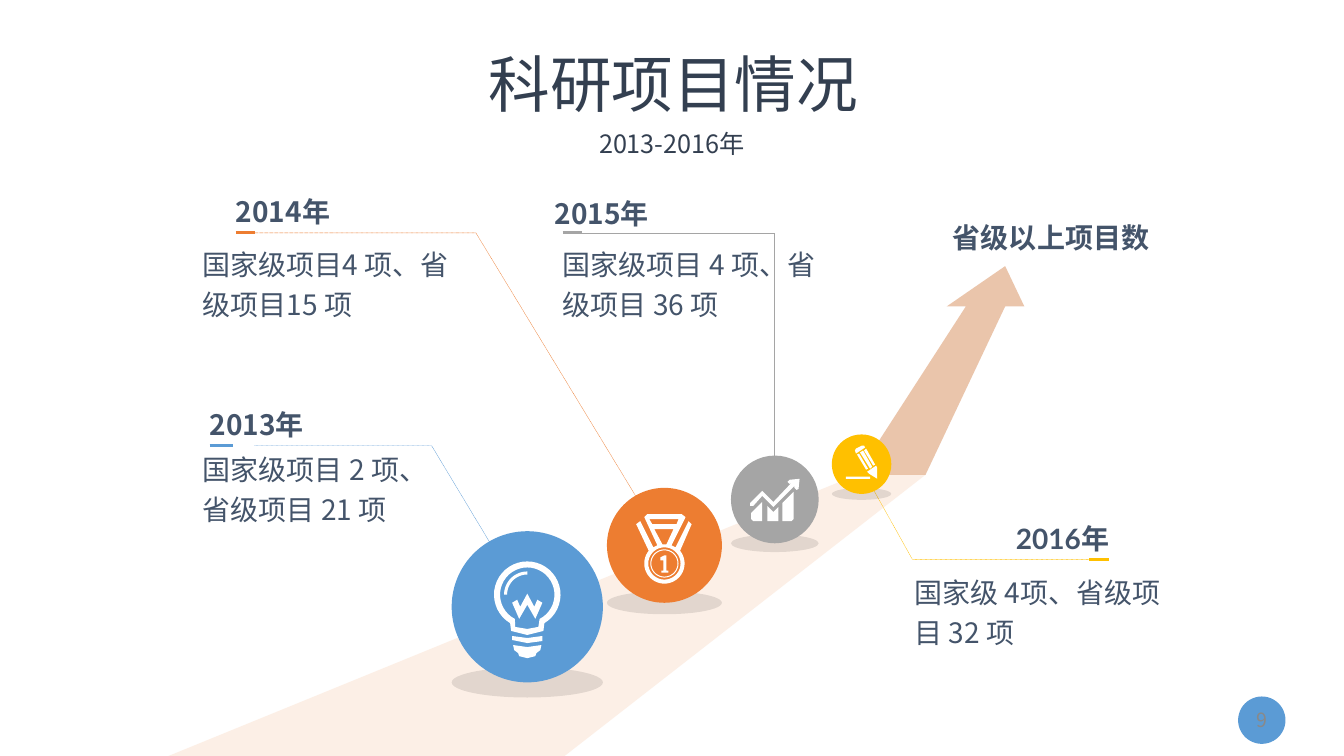
from dataclasses import dataclass
from math import cos, radians, sin

from lxml import etree
from pptx import Presentation
from pptx import util as u
from pptx.dml.color import RGBColor
from pptx.enum import dml, shapes, text
from pptx.oxml import ns

Point = tuple[float, float]
Contour = list[Point]

COLORS = {
    "blue": "5B9BD5", "orange": "ED7D31", "gray": "A5A5A5", "yellow": "FFC000",
    "road": "F4B183", "arrow": "C55A11", "shadow": "000000", "white": "FFFFFF",
    "body": "44546A", "title": "333F50", "number": "898989",
}
CJK = "Noto Sans CJK SC"
LEFT, CENTER, RIGHT = text.PP_ALIGN.LEFT, text.PP_ALIGN.CENTER, text.PP_ALIGN.RIGHT


@dataclass
class Year:
    label: str
    detail: str
    color: str
    label_box: tuple[float, float, float]
    detail_box: tuple[float, float, float]
    accent: tuple[float, float, float]  # left, right, y
    leader: Contour
    orb: tuple[float, float, float]  # left, top, diameter
    icon: list[Contour]
    align: text.PP_ALIGN = LEFT
    font: str = CJK


def arc(x: float, y: float, radius: float, start: int = 0, end: int = 360) -> Contour:
    """Points along a circle, angles in degrees clockwise from the right."""
    angles = [radians(start + (end - start) * i / 36) for i in range(37)]
    return [(x + radius * cos(a), y + radius * sin(a)) for a in angles]


def rgb(color: str) -> RGBColor:
    return RGBColor.from_string(COLORS[color])


def paint(shape, color: str, alpha: int = 100) -> None:
    shape.shadow.inherit = False
    shape.line.fill.background()
    shape.fill.solid()
    shape.fill.fore_color.rgb = rgb(color)
    if alpha < 100:
        value = shape.element.spPr.find(ns.qn("a:solidFill"))[0]
        etree.SubElement(value, ns.qn("a:alpha"), val=str(alpha * 1000))


def add_outline(slide, contours: list[Contour], close: bool = True):
    scaled = [[(u.Inches(x), u.Inches(y)) for x, y in c] for c in contours]
    builder = slide.shapes.build_freeform(*scaled[0][0])
    for index, points in enumerate(scaled):
        if index:
            builder.move_to(*points[0])
        builder.add_line_segments(points[1:], close=close)
    return builder.convert_to_shape()


def add_ellipse(slide, left: float, top: float, width: float, height: float,
                color: str, alpha: int = 100):
    shape = slide.shapes.add_shape(
        shapes.MSO_SHAPE.OVAL, *map(u.Inches, (left, top, width, height)))
    paint(shape, color, alpha)
    return shape


def add_leader(slide, points: Contour, color: str) -> None:
    shape = add_outline(slide, [points], close=False)
    shape.shadow.inherit = False
    shape.fill.background()
    shape.line.color.rgb = rgb(color)
    shape.line.width = u.Pt(0.25)
    shape.line.dash_style = dml.MSO_LINE.ROUND_DOT


def add_accent(slide, left: float, right: float, y: float, color: str) -> None:
    line = slide.shapes.add_connector(
        shapes.MSO_CONNECTOR.STRAIGHT, *map(u.Inches, (left, y, right, y)))
    line.line.color.rgb = rgb(color)
    line.line.width = u.Pt(2)
    etree.SubElement(line.element.spPr, ns.qn("a:effectLst"))


def write(shape, words: str, size: float, color: str, align=LEFT, bold: bool = False,
          font: str = CJK, east_asian: str = CJK, spacing=None, inset: float = 0,
          anchor=text.MSO_ANCHOR.TOP):
    frame = shape.text_frame
    frame.word_wrap = True
    frame.vertical_anchor = anchor
    frame.margin_left = frame.margin_right = u.Inches(inset)
    frame.margin_top = frame.margin_bottom = u.Inches(inset)
    paragraph = frame.paragraphs[0]
    paragraph.alignment = align
    paragraph.line_spacing = spacing
    run = paragraph.add_run()
    run.text = words
    run.font.size = u.Pt(size)
    run.font.bold = bold
    run.font.color.rgb = rgb(color)
    run.font.name = font
    etree.SubElement(run.font._element, ns.qn("a:ea"), typeface=east_asian)
    return paragraph


def add_box(slide, left: float, top: float, width: float, height: float):
    return slide.shapes.add_textbox(*map(u.Inches, (left, top, width, height)))


BULB = [
    arc(5.23, 5.9, 0.33, 121, 419) + [(5.39, 6.26), (5.23, 6.3), (5.07, 6.26)],
    arc(5.23, 5.9, 0.27, 117, 423) + [(5.34, 6.22), (5.23, 6.24), (5.11, 6.22)],
    arc(5.23, 5.9, 0.23, 180, 270) + arc(5.23, 5.9, 0.2, 270, 180),
    [(5.08, 6.31), (5.23, 6.33), (5.38, 6.31), (5.38, 6.36), (5.23, 6.38), (5.08, 6.35)],
    [(5.09, 6.4), (5.23, 6.42), (5.37, 6.4), (5.36, 6.45), (5.32, 6.48),
     (5.31, 6.51), (5.23, 6.53), (5.15, 6.51), (5.14, 6.48), (5.1, 6.45)],
    [(5.3, 6.02), (5.23, 5.89), (5.16, 6.02), (5.13, 5.95), (5.08, 5.98),
     (5.15, 6.14), (5.23, 6), (5.31, 6.14), (5.38, 5.98), (5.33, 5.95)],
]
MEDAL = [
    arc(6.59, 5.59, 0.2, -39, 219) + [
        (6.31, 5.2), (6.35, 5.17), (6.48, 5.43), (6.52, 5.41), (6.39, 5.13), (6.42, 5.1),
        (6.76, 5.1), (6.8, 5.13), (6.66, 5.41), (6.7, 5.43), (6.83, 5.17), (6.86, 5.2)],
    [(6.44, 5.15), (6.73, 5.15), (6.71, 5.2), (6.47, 5.2)],
    [(6.49, 5.25), (6.68, 5.25), (6.61, 5.4), (6.57, 5.4)],
    *[arc(6.59, 5.59, radius) for radius in (0.16, 0.14, 0.13)],
    [(6.61, 5.51), (6.59, 5.51), (6.55, 5.53), (6.55, 5.56), (6.58, 5.56), (6.58, 5.66),
     (6.56, 5.66), (6.56, 5.68), (6.63, 5.68), (6.63, 5.66), (6.61, 5.66)],
]
GROWTH = [
    [(7.83, 4.76), (7.81, 4.78), (7.83, 4.8), (7.85, 4.79), (7.67, 4.98), (7.56, 4.87),
     (7.44, 4.99), (7.44, 5.02), (7.47, 5.02), (7.56, 4.92), (7.67, 5.03), (7.88, 4.82),
     (7.88, 4.84), (7.9, 4.86), (7.92, 4.85), (7.93, 4.75)],
    [(7.61, 5.02), (7.61, 5.17), (7.72, 5.17), (7.72, 5.03), (7.67, 5.08)],
    [(7.45, 5.15), (7.47, 5.17), (7.56, 5.17), (7.56, 4.98), (7.45, 5.09)],
    [(7.76, 4.99), (7.76, 5.17), (7.85, 5.17), (7.87, 5.15), (7.87, 4.88)],
]
PENCIL = [
    [(8.6, 4.68), (8.62, 4.7), (8.7, 4.75), (8.7, 4.64), (8.69, 4.62)],
    [(8.66, 4.62), (8.68, 4.61), (8.59, 4.45), (8.57, 4.47)],
    [(8.65, 4.63), (8.56, 4.47), (8.53, 4.49), (8.63, 4.65)],
    [(8.5, 4.51), (8.59, 4.66), (8.61, 4.65), (8.52, 4.5)],
    [(8.49, 4.5), (8.58, 4.44), (8.57, 4.42), (8.55, 4.42), (8.49, 4.45), (8.48, 4.47)],
    [(8.39, 4.75), (8.63, 4.75), (8.63, 4.73), (8.39, 4.73)],
]
YEARS = [
    Year("2013年", "国家级项目 2 项、省级项目 21 项", "blue", (2.08, 4.04, 2.28),
         (2.01, 4.42, 2.28), (2.08, 2.31, 4.42), [(2.52, 4.42), (4.28, 4.42), (5.23, 6)],
         (4.48, 5.27, 1.5), BULB),
    Year("2014年", "国家级项目4 项、省级项目15 项", "orange", (2.34, 1.93, 1.93),
         (2.01, 2.39, 2.47), (2.34, 2.53, 2.31), [(2.52, 2.31), (4.72, 2.31), (6.59, 5.39)],
         (6.02, 4.84, 1.14), MEDAL),
    Year("2015年", "国家级项目 4 项、省级项目 36 项", "gray", (5.5, 1.95, 1.93),
         (5.58, 2.39, 2.54), (5.58, 5.77, 2.31), [(5.72, 2.31), (7.68, 2.31), (7.68, 4.95)],
         (7.25, 4.52, 0.87), GROWTH),
    Year("2016年", "国家级 4项、省级项目 32 项", "yellow", (9.07, 5.17, 1.93),
         (9.07, 5.64, 2.64), (10.8, 11, 5.55), [(10.86, 5.55), (9.05, 5.55), (8.53, 4.62)],
         (8.25, 4.31, 0.59), PENCIL, RIGHT, "Lato"),
]
ROAD = [(1.67, 7.5), (5.6, 7.5), (9.18, 4.71), (8.5, 4.71)]
ARROW = [(10.16, 3.04), (9.97, 2.64), (9.39, 3.04), (9.58, 3.04),
         (8.5, 4.71), (9.18, 4.71), (9.97, 3.04)]


def main() -> None:
    presentation = Presentation()
    presentation.slide_width, presentation.slide_height = u.Inches(13.33), u.Inches(7.5)
    slide = presentation.slides.add_slide(presentation.slide_layouts[6])

    # Page number
    badge = add_ellipse(slide, 12.28, 6.91, 0.47, 0.47, "blue")
    write(badge, "9", 14, "number", CENTER, anchor=text.MSO_ANCHOR.MIDDLE)

    # Road and rising arrow
    paint(add_outline(slide, [ROAD]), "road", 20)
    paint(add_outline(slide, [ARROW]), "arrow", 35)

    # Years: leaders lie behind all the orbs
    for year in YEARS:
        add_leader(slide, year.leader, year.color)
    for year in YEARS:
        left, top, size = year.orb
        add_ellipse(slide, left, top + 0.9 * size, size, 0.2 * size, "shadow", 10)
        add_ellipse(slide, left, top, size, size, year.color)
        paint(add_outline(slide, year.icon), "white")
        write(add_box(slide, *year.detail_box, 0.8), year.detail, 20, "body", spacing=1.2)
        add_accent(slide, *year.accent, year.color)
        write(add_box(slide, *year.label_box, 0.36), year.label, 20, "body",
              year.align, True, year.font)

    # Headings
    write(add_box(slide, 9.33, 2.24, 2.19, 0.35), "省级以上项目数", 20, "body",
          CENTER, True, "Lato", spacing=u.Pt(20))
    write(add_box(slide, 0.93, 0.36, 11.5, 1.01), "科研项目情况", 44, "title", CENTER,
          font="Noto Sans CJK JP", east_asian="Noto Sans CJK JP", spacing=0.9,
          inset=0.05, anchor=text.MSO_ANCHOR.MIDDLE)
    period = write(add_box(slide, 3.48, 1.15, 6.37, 0.38), "2013-2016年", 18, "title",
                   CENTER, spacing=1.2, inset=0.06)
    period.space_before = u.Pt(3)

    presentation.save("out.pptx")


if __name__ == "__main__":
    main()
